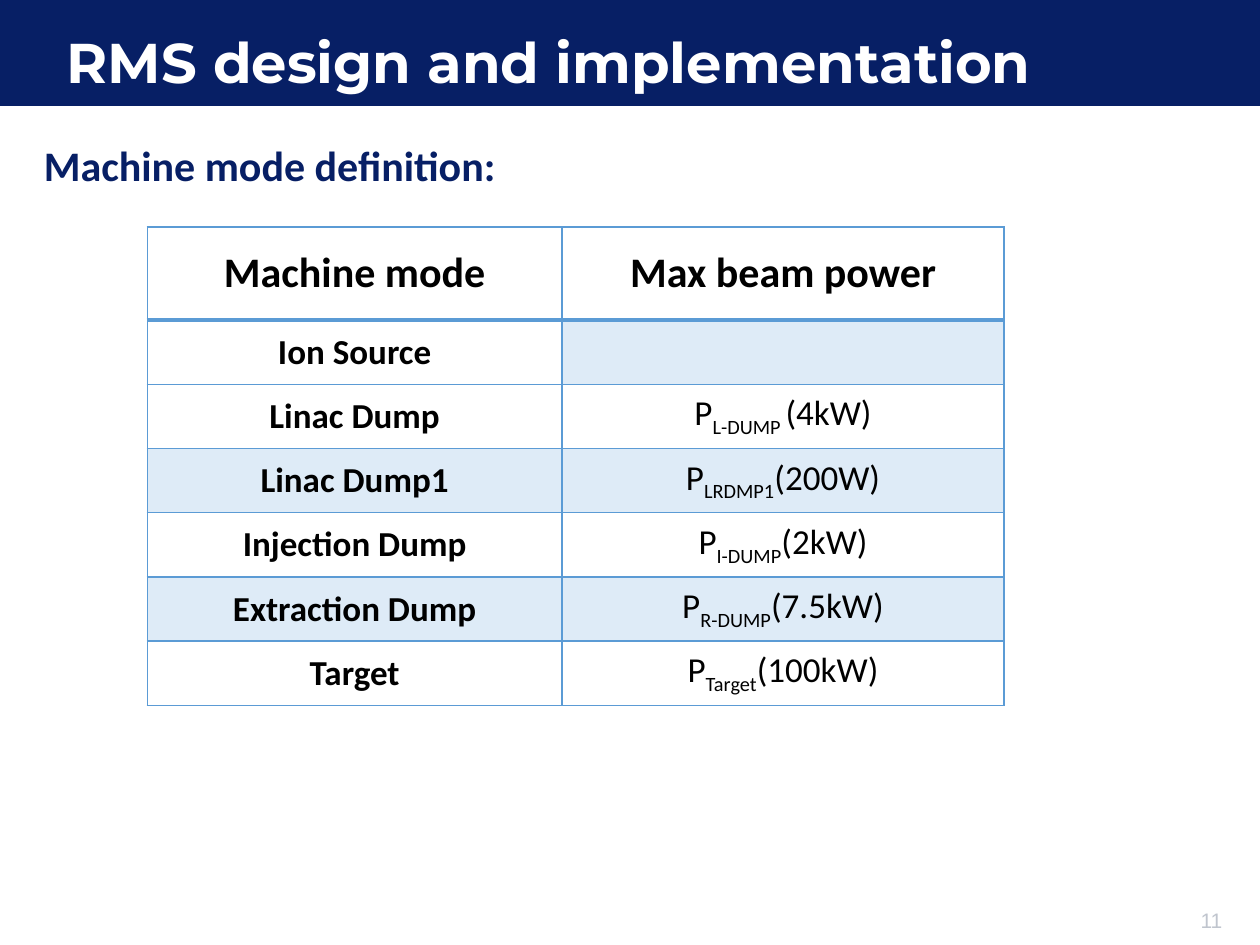
from dataclasses import dataclass

from lxml import etree
from pptx import Presentation
from pptx.enum import shapes, text
from pptx.oxml import ns
from pptx.util import Inches, Pt
from pptx.dml.color import RGBColor

COLORS = {
    "navy": "071F65",
    "white": "FFFFFF",
    "black": "000000",
    "grey": "C0C5CE",
    "border": "5B9BD5",
    "shade": "DEEBF7",
}


@dataclass
class Mode:
    name: str
    subscript: str = ""
    power: str = ""
    name_shaded: bool = False
    power_shaded: bool = False


MODES = [
    Mode("Ion Source", power_shaded=True),
    Mode("Linac Dump", "L-DUMP ", "(4kW)"),
    Mode("Linac Dump1", "LRDMP1", "(200W)", True, True),
    Mode("Injection Dump", "I-DUMP", "(2kW)"),
    Mode("Extraction Dump", "R-DUMP", "(7.5kW)", True, True),
    Mode("Target", "Target", "(100kW)"),
]
HEADINGS = ["Machine mode", "Max beam power"]
COLUMN_WIDTHS = [3.29, 3.51]
HEADER_HEIGHT, ROW_HEIGHT = 0.74, 0.51


def rgb(name: str) -> RGBColor:
    return RGBColor.from_string(COLORS[name])


def add_run(paragraph, content: str, size: float, color: str,
            bold: bool = False, name: str = "Calibri"):
    run = paragraph.add_run()
    run.text = content
    for attribute, value in {"size": Pt(size), "bold": bold, "name": name}.items():
        setattr(run.font, attribute, value)
    run.font.color.rgb = rgb(color)
    return run


def add_label(slide, box: tuple, content: str, size: float, color: str,
              bold: bool = False, name: str = "Calibri", wrap: bool = True,
              alignment=text.PP_ALIGN.LEFT) -> None:
    frame = slide.shapes.add_textbox(*map(Inches, box)).text_frame
    frame.word_wrap = wrap
    frame.paragraphs[0].alignment = alignment
    add_run(frame.paragraphs[0], content, size, color, bold, name)


def style_cell(cell, shaded: bool, bottom: float, top: float):
    """Set borders, fill and margins, and return the centred paragraph."""
    properties = cell._tc.get_or_add_tcPr()
    for side, width in {"lnL": 1, "lnR": 1, "lnT": top, "lnB": bottom}.items():
        line = etree.SubElement(properties, ns.qn(f"a:{side}"), w=str(Pt(width)))
        fill = etree.SubElement(line, ns.qn("a:solidFill"))
        etree.SubElement(fill, ns.qn("a:srgbClr"), val=COLORS["border"])
    if shaded:
        cell.fill.solid()
        cell.fill.fore_color.rgb = rgb("shade")
    else:
        cell.fill.background()
    margins = {"margin_left": 0.07, "margin_right": 0.07,
               "margin_top": 0, "margin_bottom": 0}
    for attribute, value in margins.items():
        setattr(cell, attribute, Inches(value))
    cell.vertical_anchor = text.MSO_ANCHOR.MIDDLE
    paragraph = cell.text_frame.paragraphs[0]
    paragraph.alignment = text.PP_ALIGN.CENTER
    return paragraph


def add_title(slide, content: str) -> None:
    # Navy band, placed behind the title
    band = slide.shapes.add_shape(shapes.MSO_SHAPE.RECTANGLE, 0, 0,
                                  Inches(10), Inches(0.84))
    band.shadow.inherit = False
    band.fill.solid()
    band.fill.fore_color.rgb = rgb("navy")
    band.line.fill.background()
    title = slide.shapes.title
    title._element.addprevious(band._element)

    # Title text
    position = {"left": 0.43, "top": 0.2, "width": 8.6, "height": 0.64}
    for attribute, value in position.items():
        setattr(title, attribute, Inches(value))
    frame = title.text_frame
    frame.auto_size = text.MSO_AUTO_SIZE.NONE
    frame.vertical_anchor = text.MSO_ANCHOR.MIDDLE
    paragraph = frame.paragraphs[0]
    paragraph.alignment = text.PP_ALIGN.LEFT
    paragraph.line_spacing = 0.9
    add_run(paragraph, content, 32, "white", True, "Montserrat")


def add_mode_table(slide) -> None:
    height = HEADER_HEIGHT + ROW_HEIGHT * len(MODES)
    table = slide.shapes.add_table(
        len(MODES) + 1, len(HEADINGS), Inches(1.17), Inches(1.8),
        Inches(sum(COLUMN_WIDTHS)), Inches(height)).table
    table.horz_banding = False
    for column, width in zip(table.columns, COLUMN_WIDTHS):
        column.width = Inches(width)
    for index, row in enumerate(table.rows):
        row.height = Inches(ROW_HEIGHT if index else HEADER_HEIGHT)

    # Header row, with a heavier rule below
    for column, heading in enumerate(HEADINGS):
        paragraph = style_cell(table.cell(0, column), False, bottom=2, top=1)
        add_run(paragraph, heading, 24, "black", True)

    # One row for each machine mode
    for row, mode in enumerate(MODES, start=1):
        top = 2 if row == 1 else 1
        paragraph = style_cell(table.cell(row, 0), mode.name_shaded, 1, top)
        add_run(paragraph, mode.name, 20, "black", True)
        paragraph = style_cell(table.cell(row, 1), mode.power_shaded, 1, top)
        if mode.power:
            add_run(paragraph, "P", 20, "black")
            subscript = add_run(paragraph, mode.subscript, 20, "black")
            subscript.font._element.set("baseline", "-25000")
            add_run(paragraph, mode.power, 20, "black")


def main() -> None:
    presentation = Presentation()
    presentation.slide_width = Inches(10)
    presentation.slide_height = Inches(7.5)
    slide = presentation.slides.add_slide(presentation.slide_layouts[5])

    add_title(slide, "RMS design and implementation")
    add_label(slide, (0.25, 1.06, 5.86, 0.5), "Machine mode definition:",
              24, "navy", bold=True)
    add_mode_table(slide)
    # Slide number
    add_label(slide, (9.39, 7.15, 0.41, 0.3), "11", 12, "grey", name="Arial",
              wrap=False, alignment=text.PP_ALIGN.RIGHT)
    presentation.save("out.pptx")


if __name__ == "__main__":
    main()
